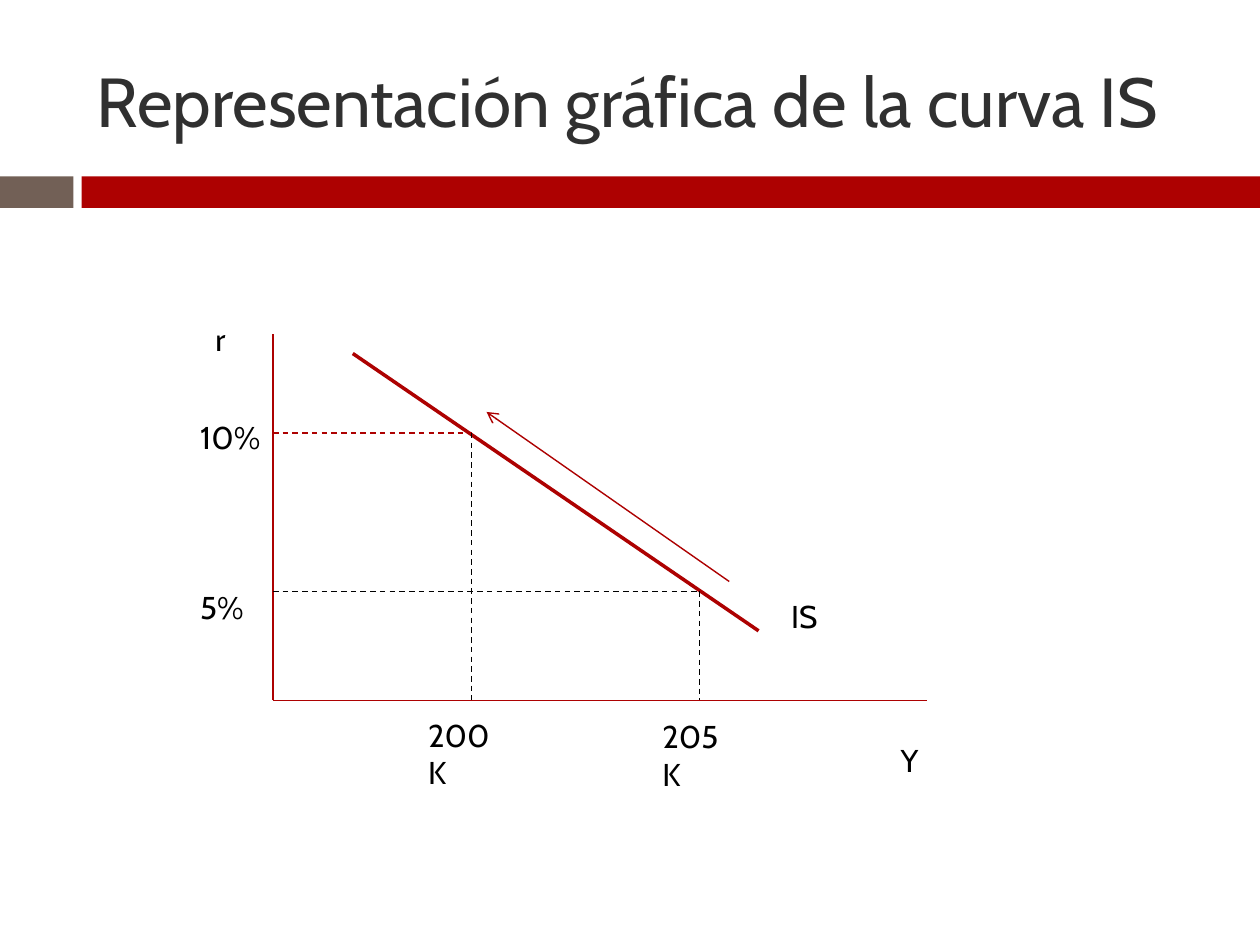
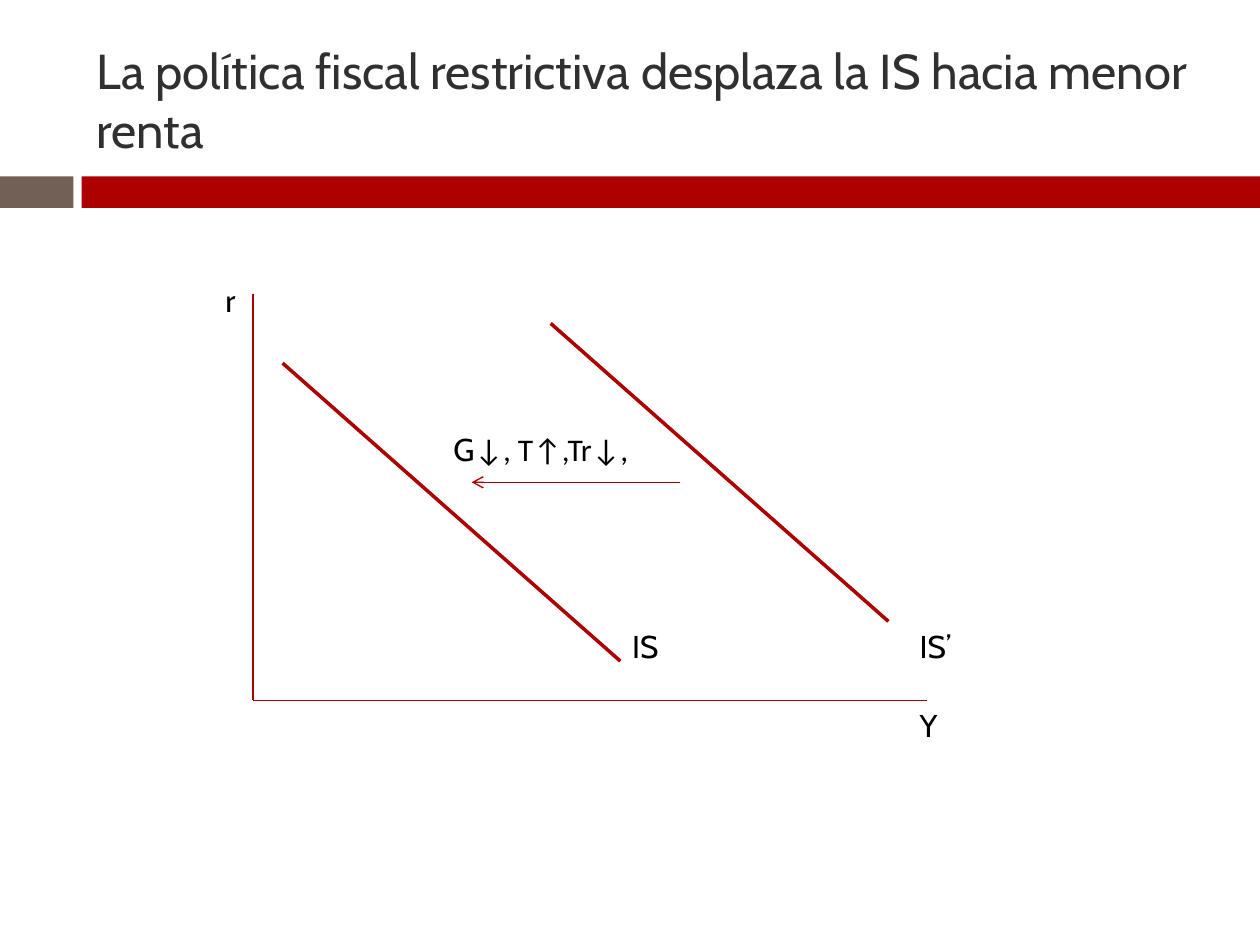
from typing import NamedTuple

from lxml.etree import SubElement
from pptx import Presentation
from pptx.dml.color import RGBColor
from pptx.enum.dml import MSO_LINE as Dash
from pptx.enum.shapes import MSO_CONNECTOR as Link, MSO_SHAPE as Form
from pptx.enum.text import MSO_ANCHOR as Anchor, MSO_AUTO_SIZE as Fit
from pptx.oxml.ns import qn
from pptx.slide import Slide
from pptx.util import Pt

RED, BROWN, GREY, BLACK = "AD0101", "726056", "303030", "000000"
FONT = "Cabin"
THIN, THICK = 0.79, 2
FOOT, END = 400.3, 530


class Run(NamedTuple):
    """A piece of text in one font."""
    text: str
    font: str = FONT


class Label(NamedTuple):
    """A text box of one paragraph."""
    left: float
    top: float
    width: float
    runs: list[Run]
    wrap: bool = True
    height: float = 29.1
    size: float = 18
    tint: str = BLACK
    title: bool = False


class Line(NamedTuple):
    """A straight line from one point to another."""
    x1: float
    y1: float
    x2: float
    y2: float
    width: float = THIN
    tint: str = RED
    dash: bool = False
    arrow: bool = False


class Band(NamedTuple):
    """A filled bar under the title."""
    left: float
    width: float
    tint: str


BANDS = [Band(0, 42, BROWN), Band(46.6, 673.4, RED)]


def color(code: str) -> RGBColor:
    """Turn a hex string into a colour."""
    return RGBColor.from_string(code)


def draw_band(slide: Slide, band: Band) -> None:
    """Draw one bar."""
    bar = slide.shapes.add_shape(
        Form.RECTANGLE, Pt(band.left), Pt(100.8), Pt(band.width), Pt(18))
    bar.shadow.inherit = False
    bar.fill.solid()
    bar.fill.fore_color.rgb = color(band.tint)
    bar.line.fill.background()


def draw_label(slide: Slide, label: Label) -> None:
    """Draw one text box."""
    box = slide.shapes.add_textbox(
        Pt(label.left), Pt(label.top), Pt(label.width), Pt(label.height))
    frame = box.text_frame
    frame.word_wrap = label.wrap
    frame.auto_size = Fit.NONE if label.title else Fit.SHAPE_TO_FIT_TEXT
    frame.vertical_anchor = Anchor.MIDDLE if label.title else Anchor.TOP
    for part in label.runs:
        run = frame.paragraphs[0].add_run()
        run.text = part.text
        run.font.name = part.font
        run.font.size = Pt(label.size)
        run.font.color.rgb = color(label.tint)


def draw_line(slide: Slide, line: Line) -> None:
    """Draw one line or arrow."""
    link = slide.shapes.add_connector(
        Link.STRAIGHT, Pt(line.x1), Pt(line.y1), Pt(line.x2), Pt(line.y2))
    link.line.width = Pt(line.width)
    link.line.color.rgb = color(line.tint)
    if line.dash:
        link.line.dash_style = Dash.DASH
    props = link._element.spPr
    if line.arrow:
        SubElement(props.find(qn("a:ln")), qn("a:tailEnd"), type="arrow")
    SubElement(props, qn("a:effectLst"))


def axes(left: float, top: float) -> list[Line]:
    """Give the two axes that meet at the foot."""
    return [Line(left, top, left, FOOT), Line(left, FOOT, END, FOOT)]


def guides(left: float, x: float, y: float, tint: str) -> list[Line]:
    """Give the dashed lines from a point of the curve to both axes."""
    return [Line(left, y, x, y, tint=tint, dash=True),
            Line(x, y, x, FOOT, tint=BLACK, dash=True)]


def add_slide(deck: Presentation, title: str, size: float,
              lines: list[Line], labels: list[Label]) -> None:
    """Add a slide with bands, title and graph."""
    slide = deck.slides.add_slide(deck.slide_layouts[6])
    for band in BANDS:
        draw_band(slide, band)
    draw_label(slide, Label(48.2, 18, 642.2, [Run(title)], height=77.8,
                            size=size, tint=GREY, title=True))
    for line in lines:
        draw_line(slide, line)
    for label in labels:
        draw_label(slide, label)


def main() -> None:
    """Build and save the deck."""
    deck = Presentation()
    deck.slide_width, deck.slide_height = Pt(720), Pt(540)

    left = 156
    add_slide(
        deck, "Representación gráfica de la curva IS", 39.6,
        [*axes(left, 191),
         Line(201.6, 202, 433.5, 360.5, THICK),
         *guides(left, 269.5, 247.4, RED),
         *guides(left, 399.6, 338, BLACK),
         Line(416.7, 332.3, 278, 235.4, arrow=True)],
        [Label(445, 337.7, 124.6, [Run("IS")]),
         Label(237.6, 405.4, 54.7, [Run("200K")]),
         Label(371.5, 406, 54.7, [Run("205K")]),
         Label(107.3, 332.6, 39.6, [Run("5%")], wrap=False),
         Label(107.3, 235.4, 49.7, [Run("10%")], wrap=False),
         Label(116, 179.3, 40.3, [Run("r")]),
         Label(507.6, 419.8, 79.2, [Run("Y")])])

    top, wide, tall = 207.5, 193, 170.3
    shift, rise = 153.2, 22.7
    add_slide(
        deck, "La política fiscal restrictiva desplaza la IS hacia menor renta",
        28,
        [*axes(144.6, 168),
         *(Line(161.5 + step * shift, top - step * rise,
                161.5 + step * shift + wide, top - step * rise + tall, THICK)
           for step in range(2)),
         Line(388.4, 275.6, 269.5, 275.6, arrow=True)],
        [Label(252, 242, 136, [Run("G"), Run("↓, T↑,Tr↓,", "Calibri")]),
         Label(518.4, 355, 33.8, [Run("IS’")]),
         Label(354.2, 355, 39.6, [Run("IS")]),
         Label(518.4, 399.6, 96.5, [Run("Y")]),
         Label(121.7, 157, 22.3, [Run("r")])])
    deck.save("out.pptx")


if __name__ == "__main__":
    main()
